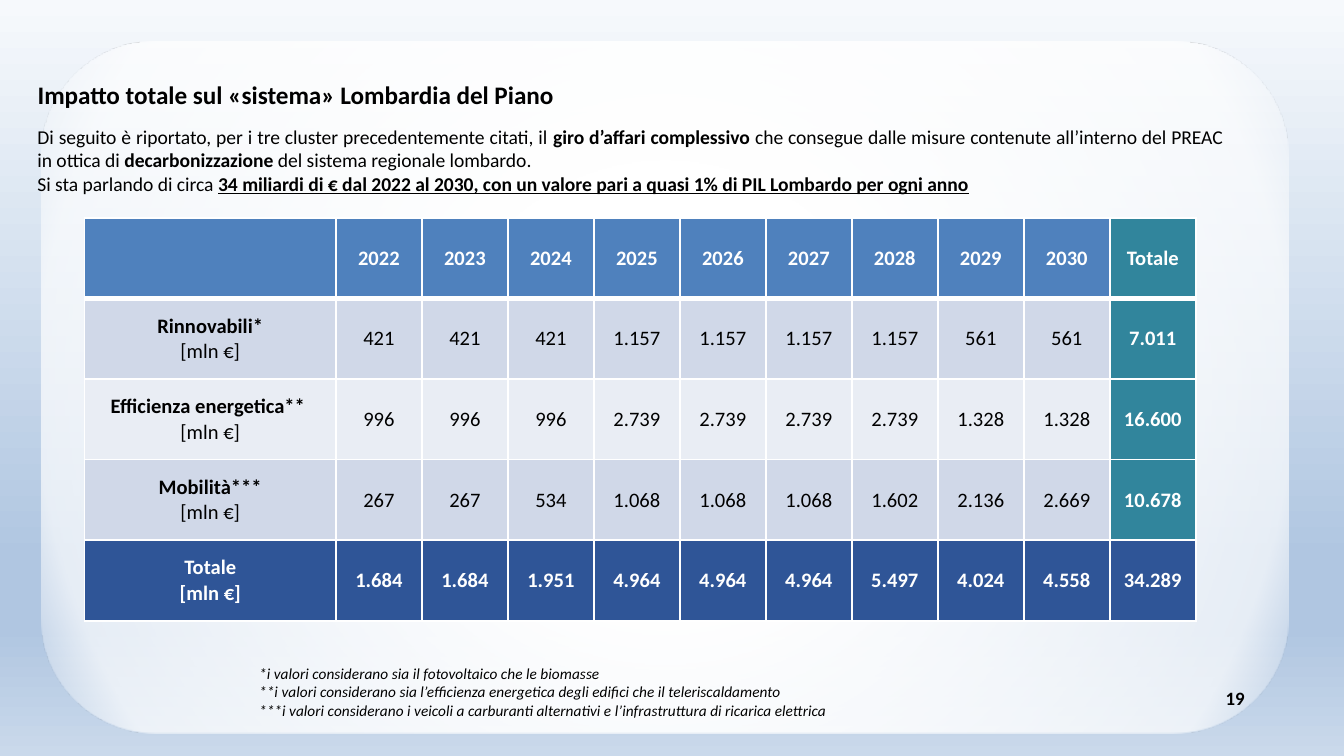
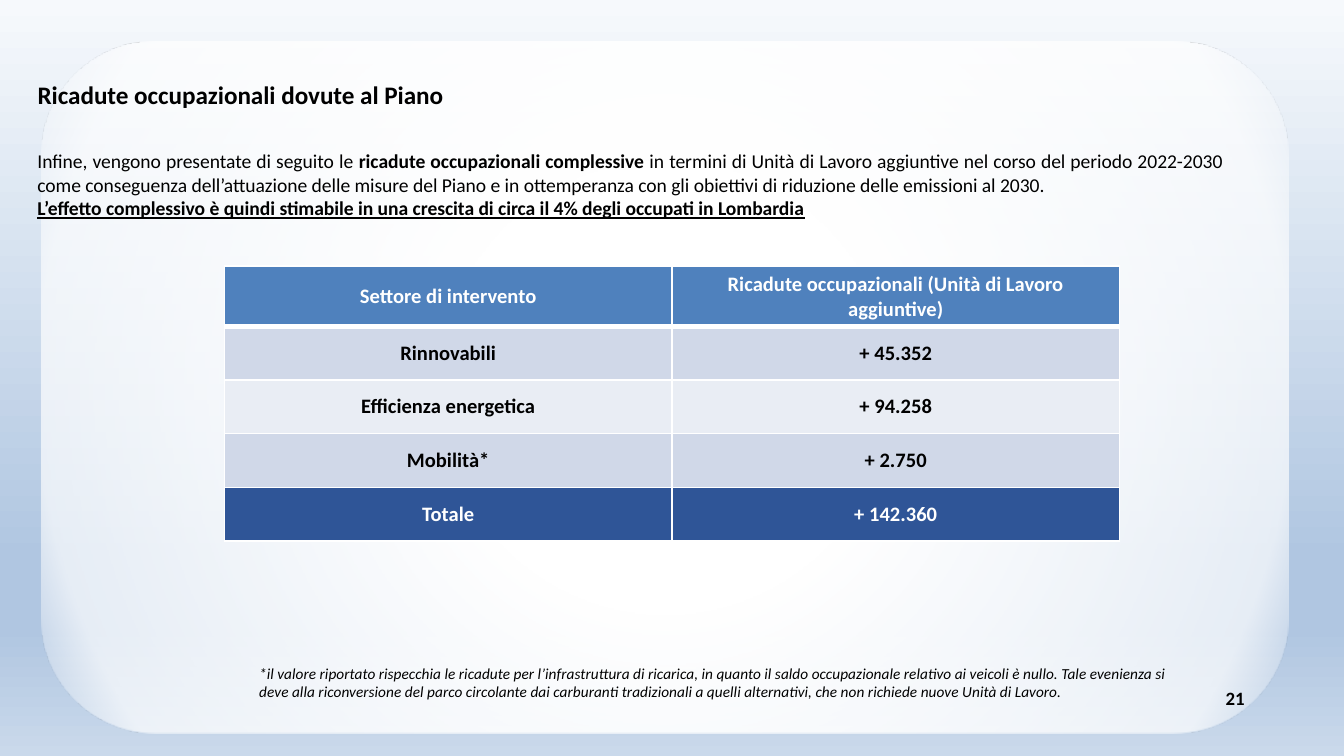
from lxml import etree
from pptx import Presentation
from pptx import util as u
from pptx.dml.color import RGBColor
from pptx.enum import shapes, text
from pptx.oxml import parse_xml
from pptx.oxml.ns import nsdecls, qn

FONT = "Calibri"
C = {"black": "000000", "white": "FFFFFF", "header": "4F81BD", "teal": "31859C",
     "odd": "D0D8E8", "even": "E9EDF4", "total": "2F5597"}
B, BU = {"bold": True}, {"bold": True, "underline": True}

pages = [
    {"number": "19",
     "title": "Impatto totale sul «sistema» Lombardia del Piano",
     "intro_top": 0.88,
     "intro": [
         [("Di seguito è riportato, per i tre cluster precedentemente citati, il ", {}),
          ("giro d’affari complessivo ", B),
          ("che consegue dalle misure contenute all’interno del PREAC in ottica di ", {}),
          ("decarbonizzazione", B),
          (" del sistema regionale lombardo.", {})],
         [("Si sta parlando di circa ", {}),
          ("34 miliardi di € dal 2022 al 2030, con un valore pari a quasi 1% di PIL "
           "Lombardo per ogni anno", BU)]],
     "table_at": (0.63, 1.62), "cols": [1.87] + [0.64] * 10, "row": 0.6,
     "total_col": True,
     "rows": [
         ["", *range(2022, 2031), "Totale"],
         ["Rinnovabili*\n[mln €]",
          *"421 421 421 1.157 1.157 1.157 1.157 561 561 7.011".split()],
         ["Efficienza energetica** \n[mln €]",
          *"996 996 996 2.739 2.739 2.739 2.739 1.328 1.328 16.600".split()],
         ["Mobilità***\n[mln €]",
          *"267 267 534 1.068 1.068 1.068 1.602 2.136 2.669 10.678".split()],
         ["Totale\n[mln €]",
          *"1.684 1.684 1.951 4.964 4.964 4.964 5.497 4.024 4.558 34.289".split()]],
     "notes": [
         "*i valori considerano sia il fotovoltaico che le biomasse",
         "**i valori considerano sia l’efficienza energetica degli edifici che il "
         "teleriscaldamento",
         "***i valori considerano i veicoli a carburanti alternativi e "
         "l’infrastruttura di ricarica elettrica"]},
    {"number": "21",
     "title": "Ricadute occupazionali dovute al Piano",
     "intro_top": 1.06,
     "intro": [
         [("Infine, vengono presentate di seguito le ", {}),
          ("ricadute occupazionali complessive ", B),
          ("in termini di Unità di Lavoro aggiuntive nel corso del periodo 2022-2030 come "
           "conseguenza dell’attuazione delle misure del Piano e in ottemperanza con gli "
           "obiettivi di riduzione delle emissioni al 2030.", {})],
         [("L’effetto complessivo è quindi stimabile in una crescita di circa il 4% degli "
           "occupati in Lombardia", BU)]],
     "table_at": (1.67, 1.98), "cols": [3.33] * 2, "row": 0.4,
     "total_col": False,
     "rows": [
         ["Settore di intervento", "Ricadute occupazionali (Unità di Lavoro aggiuntive)"],
         ["Rinnovabili", "+ 45.352"],
         ["Efficienza energetica", "+ 94.258"],
         ["Mobilità*", "+ 2.750"],
         ["Totale", "+ 142.360"]],
     "notes": [
         "*il valore riportato rispecchia le ricadute per l’infrastruttura di ricarica, in "
         "quanto il saldo occupazionale relativo ai veicoli è nullo. Tale evenienza si deve "
         "alla riconversione del parco circolante dai carburanti tradizionali a quelli "
         "alternativi, che non richiede nuove Unità di Lavoro."]},
]


def set_gradient(props, stops, direction):
    """Replace the solid fill in props by a gradient of (position, colour, alpha) stops."""
    gs = "".join(f'<a:gs pos="{pos * 1000}"><a:srgbClr val="{color}">'
                 f'<a:alpha val="{alpha * 1000}"/></a:srgbClr></a:gs>'
                 for pos, color, alpha in stops)
    grad = parse_xml(f'<a:gradFill {nsdecls("a")} rotWithShape="1">'
                     f'<a:gsLst>{gs}</a:gsLst>{direction}</a:gradFill>')
    props.replace(props.find(qn("a:solidFill")), grad)


def add_text(s, box, paragraphs, size, align=text.PP_ALIGN.LEFT,
             anchor=text.MSO_ANCHOR.TOP, **style):
    """Add a text box; each paragraph is a list of (text, run style)."""
    tf = s.shapes.add_textbox(*map(u.Inches, box)).text_frame
    tf.word_wrap = True
    tf.vertical_anchor = anchor
    for i, runs in enumerate(paragraphs):
        p = tf.add_paragraph() if i else tf.paragraphs[0]
        p.alignment = align
        for words, run_style in runs:
            r = p.add_run()
            r.text = words
            r.font.name, r.font.size = FONT, u.Pt(size)
            r.font.color.rgb = RGBColor.from_string(C["black"])
            for key, value in {**style, **run_style}.items():
                setattr(r.font, key, value)


# Widescreen page, 16:9
prs = Presentation()
prs.slide_width, prs.slide_height = u.Inches(10), u.Inches(10 * 9 / 16)
layout = prs.slide_layouts[5]

# Shared background gradient
layout.background.fill.solid()
set_gradient(layout.element.find(".//" + qn("p:bgPr")),
             [(0, "F6F9FC", 100), (74, "B0C6E1", 100), (83, "B0C6E1", 100),
              (100, "CAD9EB", 100)],
             '<a:lin ang="5400000" scaled="0"/>')

for n, page in enumerate(pages):
    s = prs.slides.add_slide(layout)

    # Shared white card, kept on the layout
    if n == 0:
        card = s.shapes.add_shape(shapes.MSO_SHAPE.ROUNDED_RECTANGLE,
                                  *map(u.Inches, (0.31, 0.31, 9.28, 5.15)))
        card.shadow.inherit = False
        card.line.fill.background()
        card.fill.solid()
        set_gradient(card.element.spPr,
                     [(0, C["white"], 100), (31, C["white"], 100),
                      (88, C["white"], 68), (100, C["white"], 0)],
                     '<a:path path="circle">'
                     '<a:fillToRect l="50000" t="50000" r="50000" b="50000"/></a:path>')
        layout.shapes.element.insert(2, card.element)

    # Title
    title = s.shapes.title
    title.left, title.top, title.width, title.height = map(
        u.Inches, (0.18, 0.16, 8.83, 1.09))
    tf = title.text_frame
    tf.text = page["title"]
    tf.vertical_anchor = text.MSO_ANCHOR.MIDDLE
    p = tf.paragraphs[0]
    p.alignment = text.PP_ALIGN.LEFT
    font = p.runs[0].font
    font.name, font.size, font.bold = FONT, u.Pt(13.5), True
    font.color.rgb = RGBColor.from_string(C["black"])

    # Page number
    add_text(s, (9.02, 4.78, 0.98, 0.82), [[(page["number"], B)]], 10.1,
             anchor=text.MSO_ANCHOR.MIDDLE)

    # Table
    rows, cols = page["rows"], page["cols"]
    last_row, last_col = len(rows) - 1, len(cols) - 1
    size = (sum(cols), page["row"] * len(rows))
    table = s.shapes.add_table(len(rows), len(cols),
                               *map(u.Inches, page["table_at"] + size)).table
    table.first_row = table.horz_banding = False
    for col, width in zip(table.columns, cols):
        col.width = u.Inches(width)
    for i, values in enumerate(rows):
        table.rows[i].height = u.Inches(page["row"])
        for j, value in enumerate(values):
            cell = table.cell(i, j)
            cell.vertical_anchor = text.MSO_ANCHOR.MIDDLE
            cell.margin_left = cell.margin_right = u.Inches(0.07)
            cell.margin_top = cell.margin_bottom = u.Inches(0.04)

            # White borders, thicker under the header
            tcPr = cell._tc.get_or_add_tcPr()
            for side in "LRTB":
                thick = (i, side) in ((0, "B"), (1, "T"))
                ln = etree.SubElement(tcPr, qn("a:ln" + side), w=str(u.Pt(3 if thick else 1)))
                fill = etree.SubElement(ln, qn("a:solidFill"))
                etree.SubElement(fill, qn("a:srgbClr"), val=C["white"])

            if i == last_row:
                shade = "total"
            elif j == last_col and page["total_col"]:
                shade = "teal"
            else:
                shade = "header" if i == 0 else "odd" if i % 2 else "even"
            cell.fill.solid()
            cell.fill.fore_color.rgb = RGBColor.from_string(C[shade])
            ink = "black" if shade in ("odd", "even") else "white"

            cell.text_frame.text = str(value)
            for k, p in enumerate(cell.text_frame.paragraphs):
                p.alignment = text.PP_ALIGN.CENTER
                p.font.size = u.Pt(11)
                for r in p.runs:
                    r.font.name, r.font.size = FONT, u.Pt(11)
                    r.font.bold = i in (0, last_row) or j == last_col or (j == 0 and k == 0)
                    r.font.color.rgb = RGBColor.from_string(C[ink])

    # Introduction and footnotes
    add_text(s, (0.18, page["intro_top"], 9.02, 0.73), page["intro"], 10.5,
             align=text.PP_ALIGN.JUSTIFY)
    add_text(s, (1.83, 4.89, 7.18, 0.12 + 0.13 * max(2, len(page["notes"]))),
             [[(note, {})] for note in page["notes"]], 8.25, italic=True)

prs.save("out.pptx")
